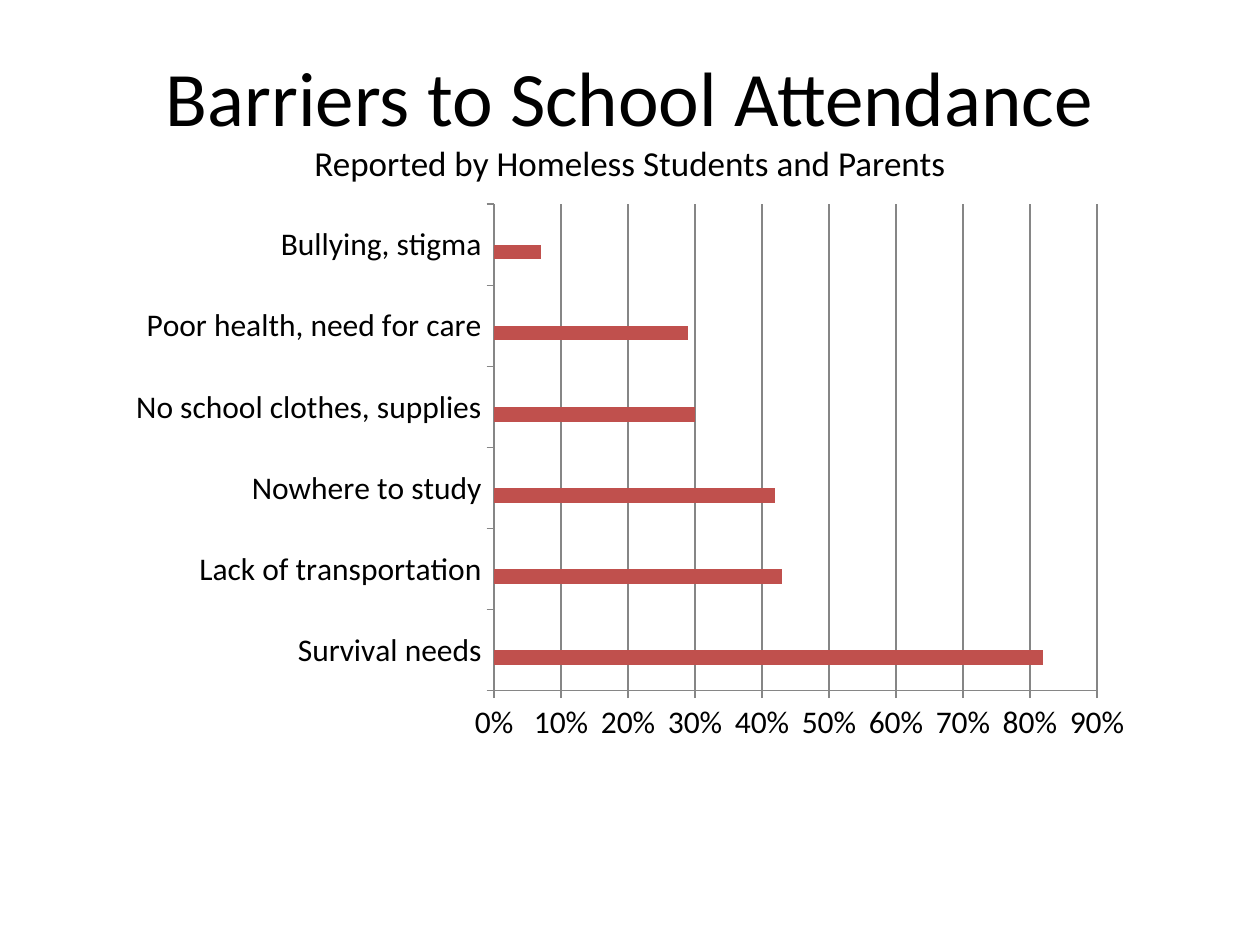
from pptx import Presentation
from pptx.chart.data import CategoryChartData
from pptx.dml.color import RGBColor
from pptx.enum.chart import XL_CHART_TYPE, XL_TICK_MARK
from pptx.enum.text import MSO_ANCHOR, PP_ALIGN
from pptx.util import Cm, Pt

BLACK = RGBColor(0x00, 0x00, 0x00)
GRAY = RGBColor(0x86, 0x86, 0x86)
BLUE = RGBColor(0x4F, 0x81, 0xBD)
RED = RGBColor(0xC0, 0x50, 0x4D)
GREEN = RGBColor(0x9B, 0xBB, 0x59)
PURPLE = RGBColor(0x80, 0x64, 0xA2)
FONT = "Calibri"


def add_span(paragraph, text, size, color=BLACK):
    span = paragraph.add_run()
    span.text = text
    span.font.name = FONT
    span.font.size = Pt(size)
    span.font.color.rgb = color


deck = Presentation()
deck.slide_width, deck.slide_height = Cm(25.4), Cm(19.05)
page = deck.slides.add_slide(deck.slide_layouts[6])

# Bar chart: only the second series holds values
barriers = {
    "Survival needs": 0.82,
    "Lack of transportation": 0.43,
    "Nowhere to study": 0.42,
    "No school clothes, supplies": 0.3,
    "Poor health, need for care": 0.29,
    "Bullying, stigma": 0.07,
}
series_colors = [BLUE, RED, GREEN, PURPLE]
chart_data = CategoryChartData(number_format="0%")
chart_data.categories = list(barriers)
for number, color in enumerate(series_colors, start=1):
    values = barriers.values() if color == RED else [None] * len(barriers)
    chart_data.add_series(f"Series {number}", values)

chart = page.shapes.add_chart(
    XL_CHART_TYPE.BAR_CLUSTERED, Cm(2.33), Cm(3.89), Cm(20.75), Cm(11.28), chart_data
).chart
chart.has_legend = False
chart.has_title = False
chart.font.name = FONT
chart.font.size = Pt(18)
chart.font.color.rgb = BLACK

plot = chart.plots[0]
plot.gap_width = 150
plot.vary_by_categories = False
for series, color in zip(plot.series, series_colors):
    series.format.fill.solid()
    series.format.fill.fore_color.rgb = color

for axis in (chart.category_axis, chart.value_axis):
    axis.major_tick_mark = XL_TICK_MARK.OUTSIDE
    axis.minor_tick_mark = XL_TICK_MARK.NONE
    axis.format.line.color.rgb = GRAY
    axis.format.line.width = Pt(0.75)
chart.category_axis.has_major_gridlines = False

percent_axis = chart.value_axis
percent_axis.minimum_scale = 0
percent_axis.maximum_scale = 0.9
percent_axis.major_unit = 0.1
percent_axis.tick_labels.number_format = "0%"
percent_axis.tick_labels.number_format_is_linked = False
percent_axis.has_major_gridlines = True
percent_axis.major_gridlines.format.line.color.rgb = GRAY
percent_axis.major_gridlines.format.line.width = Pt(0.75)

# Title with subtitle
title_box = page.shapes.add_textbox(Cm(1.27), Cm(0.76), Cm(22.86), Cm(3.18))
title_box.text_frame.word_wrap = True
title_box.text_frame.vertical_anchor = MSO_ANCHOR.MIDDLE
title = title_box.text_frame.paragraphs[0]
title.alignment = PP_ALIGN.CENTER
add_span(title, "Barriers to School Attendance", size=44)
title.add_line_break()
add_span(title, "Reported by Homeless Students and Parents", size=20)

deck.save("out.pptx")
